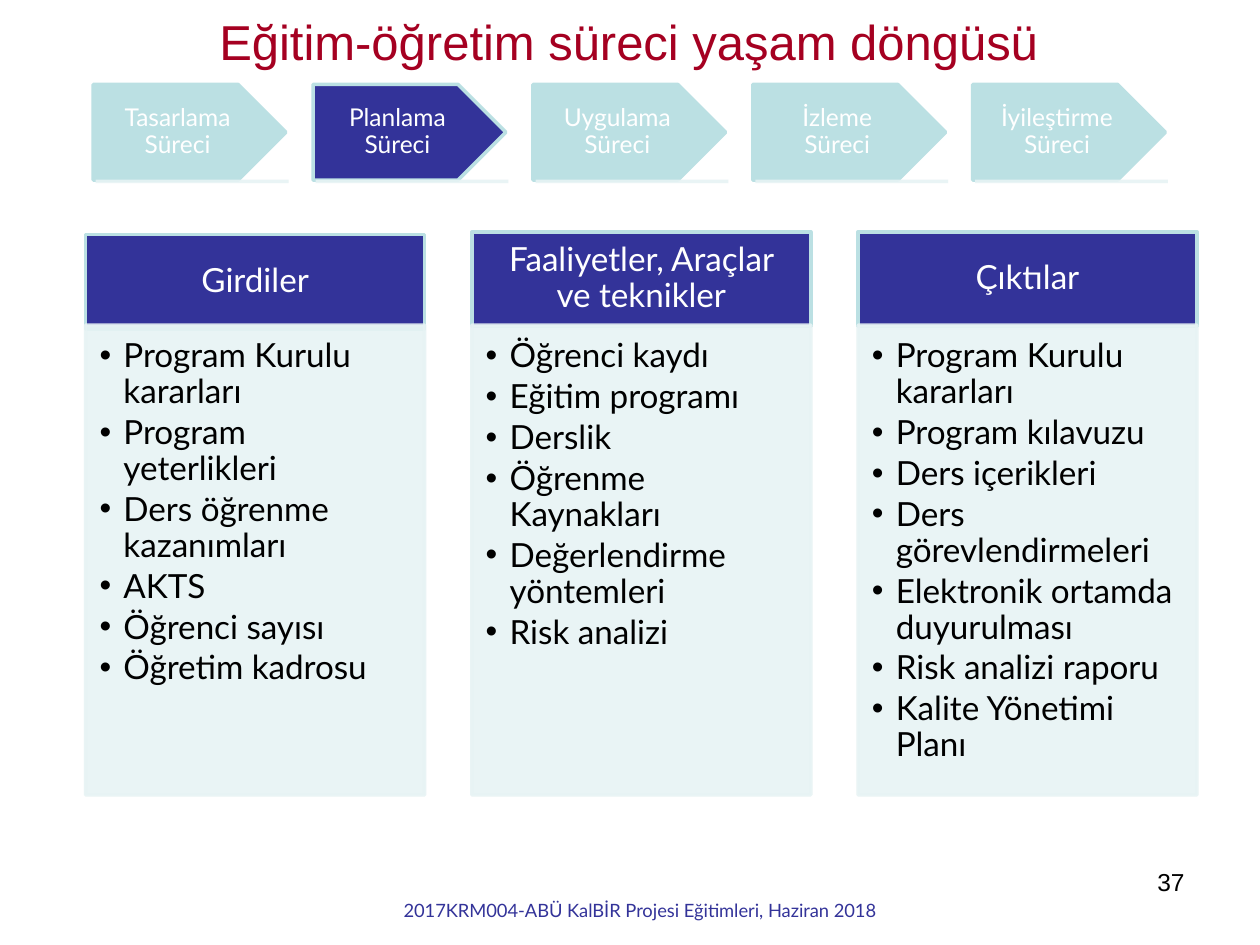
"""Build the slide on the life cycle of the teaching process."""
from dataclasses import dataclass

from pptx import Presentation
from pptx.dml.color import RGBColor
from pptx.enum.shapes import MSO_CONNECTOR as Conn, MSO_SHAPE as Kind
from pptx.enum.text import MSO_ANCHOR as Anchor, MSO_AUTO_SIZE as Fit, PP_ALIGN as Align
from pptx.oxml.ns import qn
from pptx.util import Inches, Pt
from lxml.etree import SubElement

NAVY = RGBColor(0x33, 0x33, 0x99)
TEAL = RGBColor(0xBB, 0xE0, 0xE3)
PALE = RGBColor(0xE7, 0xF3, 0xF4)
RED = RGBColor(0xA5, 0x00, 0x21)
WHITE = RGBColor(0xFF, 0xFF, 0xFF)
BLACK = RGBColor(0x00, 0x00, 0x00)


@dataclass
class Step:
    name: str
    fill: RGBColor = TEAL


@dataclass
class Panel:
    head: str
    top: float
    items: list[str]


STEPS = [
    Step("Tasarlama Süreci"),
    Step("Planlama Süreci", NAVY),
    Step("Uygulama Süreci"),
    Step("İzleme Süreci"),
    Step("İyileştirme Süreci"),
]
PANELS = [
    Panel("Girdiler", 1.86, [
        "Program Kurulu kararları", "Program yeterlikleri",
        "Ders öğrenme kazanımları", "AKTS", "Öğrenci sayısı",
        "Öğretim kadrosu"]),
    Panel("Faaliyetler, Araçlar ve teknikler", 1.84, [
        "Öğrenci kaydı", "Eğitim programı", "Derslik", "Öğrenme Kaynakları",
        "Değerlendirme yöntemleri", "Risk analizi"]),
    Panel("Çıktılar", 1.84, [
        "Program Kurulu kararları", "Program kılavuzu", "Ders içerikleri",
        "Ders görevlendirmeleri", "Elektronik ortamda duyurulması",
        "Risk analizi raporu", "Kalite Yönetimi Planı"]),
]


def box(left: float, top: float, width: float, height: float) -> list[int]:
    """Turn a box in inches into lengths."""
    return [Inches(v) for v in (left, top, width, height)]


def fade(node) -> None:
    """Make the solid fill under a node 90 % opaque."""
    color = node.find(qn("a:solidFill")).find(qn("a:srgbClr"))
    SubElement(color, qn("a:alpha"), val="90000")


def style(frame, size: float, color: RGBColor, align: Align, font: str = "Lato") -> None:
    """Format every paragraph and run of a text frame."""
    for para in frame.paragraphs:
        para.alignment = align
        for run in para.runs:
            run.font.size = Pt(size)
            run.font.name = font
            run.font.color.rgb = color


def inset(frame, left: float, top: float, right: float, bottom: float) -> None:
    """Set the margins of a text frame."""
    frame.margin_left, frame.margin_top, frame.margin_right, frame.margin_bottom = box(
        left, top, right, bottom)


def block(slide, kind: Kind, area: list[int], fill: RGBColor, line: RGBColor):
    """Draw a filled and outlined shape."""
    shape = slide.shapes.add_shape(kind, *area)
    shape.shadow.inherit = False
    shape.fill.solid()
    shape.fill.fore_color.rgb = fill
    shape.line.color.rgb = line
    shape.line.width = Pt(2)
    shape.text_frame.word_wrap = True
    return shape


def label(shape, text: str, size: float, side: float, edge: float) -> None:
    """Write centred white text in a shape."""
    frame = shape.text_frame
    frame.text = text
    frame.vertical_anchor = Anchor.MIDDLE
    inset(frame, side, edge, side, edge)
    frame.paragraphs[0].line_spacing = 0.9
    style(frame, size, WHITE, Align.CENTER)


def draw_step(slide, step: Step, left: float) -> None:
    """Draw one process arrow and its underline."""
    plate = block(slide, Kind.PENTAGON, box(left, 0.67, 1.53, 0.76), step.fill, TEAL)
    label(plate, step.name, 14, 0.11, 0.06)
    rule = slide.shapes.add_connector(Conn.STRAIGHT, *box(left + 0.02, 1.44, left + 1.55, 1.44))
    rule.line.color.rgb = PALE
    rule.line.width = Pt(2)
    props = rule._element.spPr
    fade(props.find(qn("a:ln")))
    SubElement(props, qn("a:effectLst"))


def draw_panel(slide, panel: Panel, left: float) -> None:
    """Draw one column with its header and bullet list."""
    head = block(slide, Kind.RECTANGLE, box(left, panel.top, 2.69, 0.75), NAVY, TEAL)
    label(head, panel.head, 19, 0.15, 0.08)
    body = block(slide, Kind.RECTANGLE, box(left, 2.58, 2.69, 3.73), PALE, PALE)
    props = body._element.spPr
    fade(props)
    fade(props.find(qn("a:ln")))
    frame = body.text_frame
    frame.text = "\n".join(panel.items)
    frame.vertical_anchor = Anchor.TOP
    inset(frame, 0.11, 0.11, 0.15, 0.17)
    style(frame, 19, BLACK, Align.LEFT)
    for para in frame.paragraphs:
        para.line_spacing = 0.9
        para.space_after = Pt(2.85)
        props = para._p.get_or_add_pPr()
        props.set("marL", str(Inches(0.19)))
        props.set("indent", str(Inches(-0.19)))
        SubElement(props, qn("a:buFont"), typeface="Arial")
        SubElement(props, qn("a:buChar"), char="•")


def note(slide, area: list[int], text: str, size: float, color: RGBColor,
         align: Align, font: str) -> None:
    """Add a plain text box."""
    frame = slide.shapes.add_textbox(*area).text_frame
    frame.word_wrap = True
    frame.text = text
    style(frame, size, color, align, font)


def main() -> None:
    """Build and save the slide."""
    deck = Presentation()
    deck.slide_width, deck.slide_height = Inches(10), Inches(7.5)
    slide = deck.slides.add_slide(deck.slide_layouts[5])

    title = slide.shapes.title
    title.left, title.top, title.width, title.height = box(1.64, 0.04, 6.89, 0.57)
    frame = title.text_frame
    frame.text = "Eğitim-öğretim süreci yaşam döngüsü"
    frame.word_wrap = False
    frame.auto_size = Fit.NONE
    frame.vertical_anchor = Anchor.TOP
    style(frame, 28, RED, Align.LEFT, "Arial")

    for i, step in enumerate(STEPS):
        draw_step(slide, step, 0.74 + 1.745 * i)
    for i, panel in enumerate(PANELS):
        draw_panel(slide, panel, 0.68 + 3.065 * i)

    note(slide, box(7.17, 6.83, 2.33, 0.52), "37", 14, BLACK, Align.RIGHT, "Arial")
    note(slide, box(2.87, 7.09, 4.42, 0.31),
         "2017KRM004-ABÜ KalBİR Projesi Eğitimleri, Haziran 2018",
         10.5, NAVY, Align.CENTER, "Lato")
    deck.save("out.pptx")


if __name__ == "__main__":
    main()
